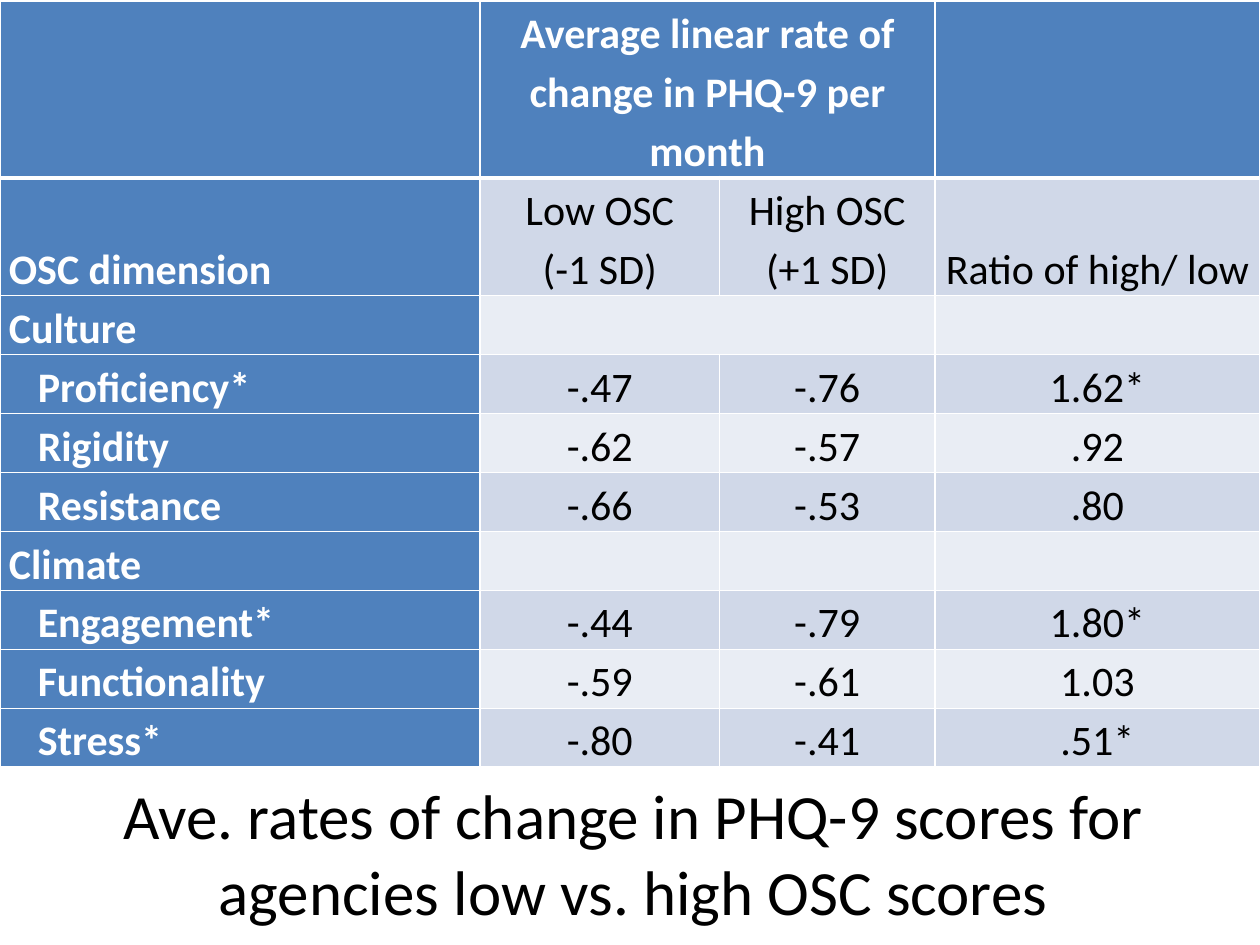
from lxml import etree
from pptx import Presentation
from pptx.dml.color import RGBColor
from pptx.enum.text import MSO_ANCHOR, PP_ALIGN
from pptx.oxml.ns import qn
from pptx.util import Inches, Pt

CENTER, LEFT = PP_ALIGN.CENTER, PP_ALIGN.LEFT
TOP, MIDDLE, BOTTOM = MSO_ANCHOR.TOP, MSO_ANCHOR.MIDDLE, MSO_ANCHOR.BOTTOM
BLUE = RGBColor(0x4F, 0x81, 0xBD)
BAND_DARK = RGBColor(0xD0, 0xD8, 0xE8)
BAND_LIGHT = RGBColor(0xE9, 0xED, 0xF4)
WHITE = RGBColor(0xFF, 0xFF, 0xFF)
BLACK = RGBColor(0, 0, 0)
FONT = "Calibri"

TITLE = "Ave. rates of change in PHQ-9 scores for agencies low vs. high OSC scores"
ROWS = [
    ("", "Average linear rate of change in PHQ-9 per month", "", ""),
    ("OSC dimension", "Low OSC\n(-1 SD)", "High OSC\n(+1 SD)", "Ratio of high/ low"),
    ("Culture", "", "", ""),
    ("Proficiency*", "-.47", "-.76", "1.62*"),
    ("Rigidity", "-.62", "-.57", ".92"),
    ("Resistance", "-.66", "-.53", ".80"),
    ("Climate", "", "", ""),
    ("Engagement*", "-.44", "-.79", "1.80*"),
    ("Functionality", "-.59", "-.61", "1.03"),
    ("Stress*", "-.80", "-.41", ".51*"),
]
COLUMN_WIDTHS = (3.81, 1.9, 1.71, 2.58)
LINES_PER_ROW = [3, 2] + [1] * 8
LINE_HEIGHT = 0.46
MERGED_ROWS = (0, 2)
INDENT = 0.23


def add_run(p, text, size, color, bold=False):
    r = p.add_run()
    r.text = text
    r.font.name, r.font.size, r.font.bold = FONT, Pt(size), bold
    r.font.color.rgb = color


def add_borders(cell, bottom):
    tc_pr = cell._tc.get_or_add_tcPr()
    for i, (side, width) in enumerate((("L", 1), ("R", 1), ("T", 1), ("B", bottom))):
        line = etree.Element(qn(f"a:ln{side}"), w=str(Pt(width)))
        fill = etree.SubElement(line, qn("a:solidFill"))
        etree.SubElement(fill, qn("a:srgbClr"), val=str(WHITE))
        tc_pr.insert(i, line)


def fill_cell(cell, text, row, col):
    header = row == 0 or col == 0
    cell.margin_left = cell.margin_right = Inches(0.07)
    cell.margin_top = cell.margin_bottom = 0
    cell.vertical_anchor = BOTTOM if row == 1 else TOP
    cell.fill.solid()
    cell.fill.fore_color.rgb = BLUE if header else BAND_DARK if row % 2 else BAND_LIGHT
    add_borders(cell, 3 if row == 0 else 1)
    if not text:
        return
    tf = cell.text_frame
    for i, line in enumerate(text.split("\n")):
        p = tf.add_paragraph() if i else tf.paragraphs[0]
        p.alignment = CENTER if col else LEFT
        p.line_spacing = 1.15
        if col == 0 and ROWS[row][1] and row > 1:
            p._p.get_or_add_pPr().set("marL", str(Inches(INDENT)))
        add_run(p, line, 24, WHITE if header else BLACK, header)


prs = Presentation()
prs.slide_width, prs.slide_height = Inches(10), Inches(7.5)
s = prs.slides.add_slide(prs.slide_layouts[6])

table = s.shapes.add_table(
    len(ROWS), len(COLUMN_WIDTHS), 0, Inches(0.01),
    prs.slide_width, Inches(LINE_HEIGHT * sum(LINES_PER_ROW)),
).table
table.first_col = True
for column, width in zip(table.columns, COLUMN_WIDTHS):
    column.width = Inches(width)
for table_row, lines in zip(table.rows, LINES_PER_ROW):
    table_row.height = Inches(LINE_HEIGHT * lines)
for row, values in enumerate(ROWS):
    for col, text in enumerate(values):
        fill_cell(table.cell(row, col), text, row, col)
for row in MERGED_ROWS:
    table.cell(row, 1).merge(table.cell(row, 2))

title = s.shapes.add_textbox(Inches(0.55), Inches(6.46), Inches(8.95), Inches(0.61))
tf = title.text_frame
tf.word_wrap = True
tf.vertical_anchor = MIDDLE
tf.paragraphs[0].alignment = CENTER
add_run(tf.paragraphs[0], TITLE, 36, BLACK)

prs.save("out.pptx")
